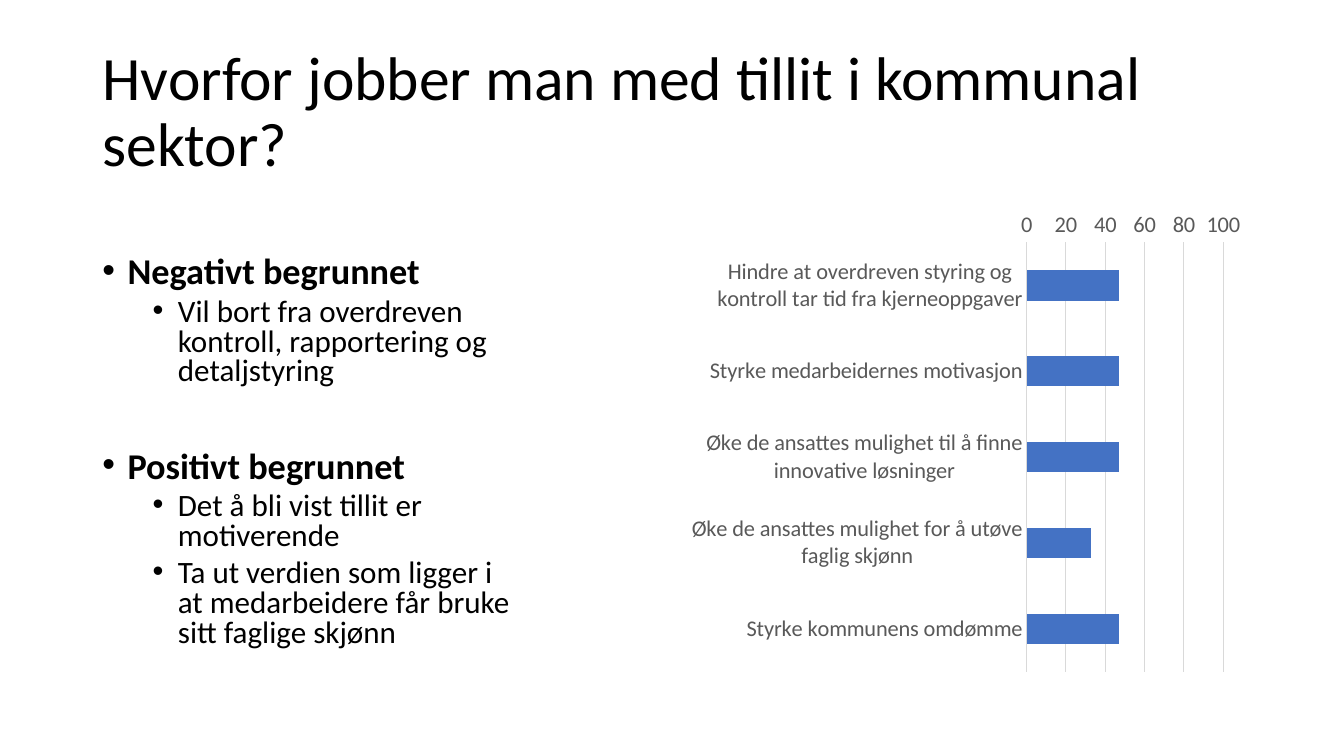
from lxml.etree import SubElement
from pptx import Presentation
from pptx.chart.data import CategoryChartData
from pptx.dml.color import RGBColor
from pptx.enum.chart import XL_CHART_TYPE, XL_TICK_MARK
from pptx.enum.text import MSO_ANCHOR, MSO_AUTO_SIZE, PP_ALIGN
from pptx.oxml.ns import qn
from pptx.util import Pt

BLACK = RGBColor(0x00, 0x00, 0x00)
LABEL_GREY = RGBColor(0x59, 0x59, 0x59)
GRID_GREY = RGBColor(0xD9, 0xD9, 0xD9)
BAR_BLUE = RGBColor(0x44, 0x72, 0xC4)
FONT = "Calibri"

REASONS = [
    ("Negativt begrunnet", ["Vil bort fra overdreven kontroll, rapportering og detaljstyring"]),
    ("Positivt begrunnet", [
        "Det å bli vist tillit er motiverende",
        "Ta ut verdien som ligger i at medarbeidere får bruke sitt faglige skjønn",
    ]),
]
GOALS = {
    "Hindre at overdreven styring og kontroll tar tid fra kjerneoppgaver": 47,
    "Styrke medarbeidernes motivasjon": 47,
    "Øke de ansattes mulighet til å finne innovative løsninger": 47,
    "Øke de ansattes mulighet for å utøve faglig skjønn": 33,
    "Styrke kommunens omdømme": 47,
}


def set_all(target, values):
    """Set every named attribute of the target."""
    for name, value in values.items():
        setattr(target, name, value)


def style_font(font, size, color, bold=False):
    """Give a font its face, size, weight and colour."""
    set_all(font, {"name": FONT, "size": Pt(size), "bold": bold})
    font.color.rgb = color


def style_line(line):
    """Draw a thin grey line."""
    line.color.rgb = GRID_GREY
    line.width = Pt(0.75)


def add_title(slide, text):
    """Fill and place the title placeholder."""
    title = slide.shapes.title
    set_all(title, {"left": Pt(66), "top": Pt(28.75), "width": Pt(828), "height": Pt(104.4)})
    set_all(title.text_frame, {"text": text, "word_wrap": True,
                               "vertical_anchor": MSO_ANCHOR.MIDDLE,
                               "auto_size": MSO_AUTO_SIZE.NONE})
    heading = title.text_frame.paragraphs[0]
    set_all(heading, {"alignment": PP_ALIGN.LEFT, "line_spacing": 0.9})
    style_font(heading.runs[0].font, 44, BLACK)


def add_bullet(paragraph, text, size, indent, before, bold=False):
    """Write one bulleted paragraph with a hanging indent."""
    set_all(paragraph, {"line_spacing": 0.8, "space_before": Pt(before)})
    properties = paragraph._p.get_or_add_pPr()
    properties.set("marL", str(Pt(indent)))
    properties.set("indent", str(-Pt(18)))
    SubElement(properties, qn("a:buFont"), typeface="Arial")
    SubElement(properties, qn("a:buChar"), char="•")
    run = paragraph.add_run()
    run.text = text
    style_font(run.font, size, BLACK, bold)


def add_reasons(slide):
    """Add the headed bullet list on the left."""
    frame = slide.shapes.add_textbox(Pt(66), Pt(179.7), Pt(313.2), Pt(307)).text_frame
    frame.word_wrap = True
    for index, (heading, points) in enumerate(REASONS):
        first = frame.add_paragraph() if index else frame.paragraphs[0]
        add_bullet(first, heading, 25.9, 18, 45.3 * index, bold=True)
        for point in points:
            detail = frame.add_paragraph()
            detail.level = 1
            add_bullet(detail, point, 22.2, 54, 5)


def add_goal_chart(slide):
    """Add the bar chart of goals on the right."""
    goals = CategoryChartData()
    goals.categories = list(GOALS)
    goals.add_series("Series 1", list(GOALS.values()))
    chart = slide.shapes.add_chart(XL_CHART_TYPE.BAR_CLUSTERED, Pt(486), Pt(144),
                                   Pt(408), Pt(342.7), goals).chart
    set_all(chart, {"has_legend": False, "has_title": False})
    style_font(chart.font, 16, BLACK)

    for axis in (chart.category_axis, chart.value_axis):
        set_all(axis, {"major_tick_mark": XL_TICK_MARK.NONE,
                       "minor_tick_mark": XL_TICK_MARK.NONE})
        style_font(axis.tick_labels.font, 16, LABEL_GREY)
    chart.category_axis.reverse_order = True
    style_line(chart.category_axis.format.line)
    set_all(chart.value_axis, {"minimum_scale": 0, "maximum_scale": 100,
                               "major_unit": 20, "has_major_gridlines": True})
    chart.value_axis.format.line.fill.background()
    style_line(chart.value_axis.major_gridlines.format.line)

    bars = chart.plots[0]
    set_all(bars, {"gap_width": 182, "vary_by_categories": False})
    fill = bars.series[0].format.fill
    fill.solid()
    fill.fore_color.rgb = BAR_BLUE


def main():
    """Build and save the slide."""
    deck = Presentation()
    set_all(deck, {"slide_width": Pt(960), "slide_height": Pt(540)})
    slide = deck.slides.add_slide(deck.slide_layouts[5])
    add_title(slide, "Hvorfor jobber man med tillit i kommunal sektor?")
    add_reasons(slide)
    add_goal_chart(slide)
    deck.save("out.pptx")


if __name__ == "__main__":
    main()
